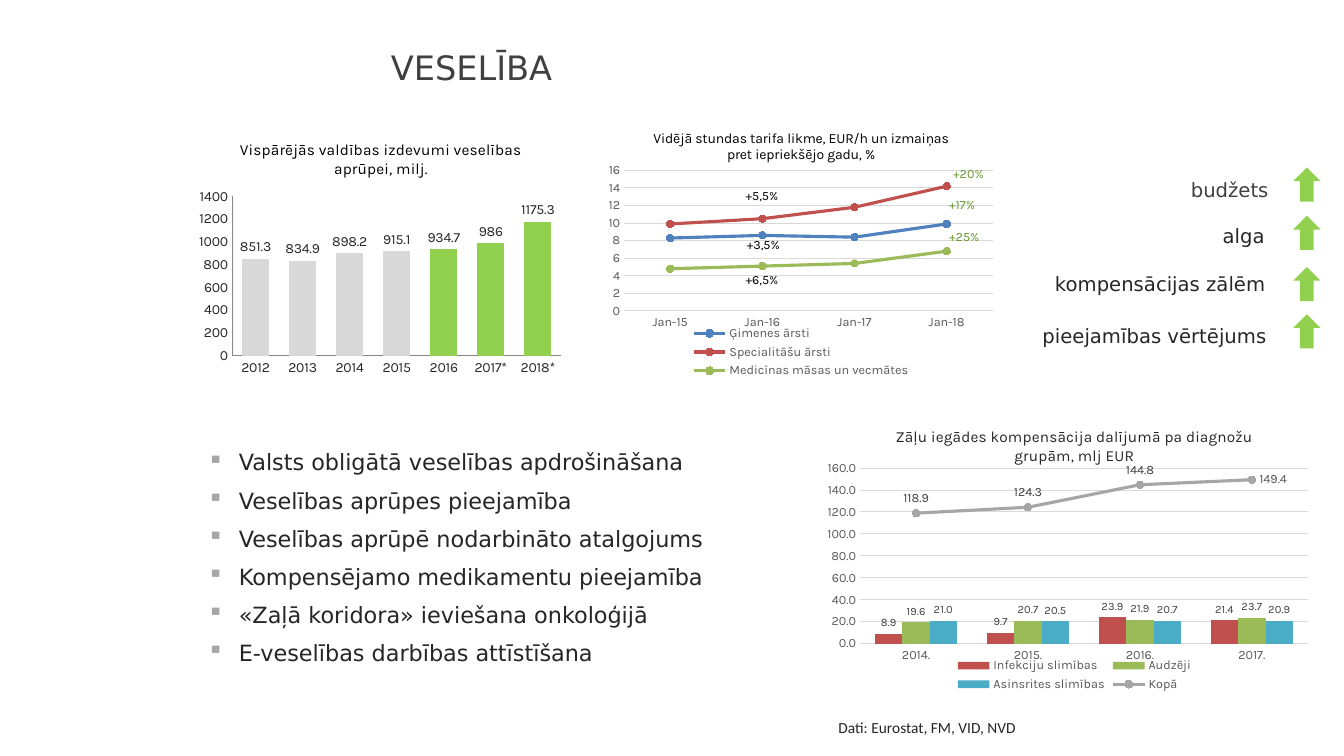
from lxml import etree
from pptx import Presentation
from pptx.chart.data import CategoryChartData
from pptx.dml.color import RGBColor
from pptx.enum.chart import (XL_CHART_TYPE, XL_LABEL_POSITION, XL_LEGEND_POSITION,
                             XL_MARKER_STYLE, XL_TICK_MARK)
from pptx.enum.shapes import MSO_SHAPE
from pptx.enum.text import PP_ALIGN
from pptx.oxml import parse_xml
from pptx.oxml.ns import nsdecls, qn
from pptx.util import Cm, Pt

COLUMNS, LINES = XL_CHART_TYPE.COLUMN_CLUSTERED, XL_CHART_TYPE.LINE_MARKERS
ABOVE, RIGHT, OUTSIDE = (XL_LABEL_POSITION.ABOVE, XL_LABEL_POSITION.RIGHT,
                         XL_LABEL_POSITION.OUTSIDE_END)
BOTTOM, CIRCLE, NO_TICK = XL_LEGEND_POSITION.BOTTOM, XL_MARKER_STYLE.CIRCLE, XL_TICK_MARK.NONE
UP_ARROW = MSO_SHAPE.UP_ARROW
ALIGN_LEFT, ALIGN_RIGHT = PP_ALIGN.LEFT, PP_ALIGN.RIGHT

BODY, CHART = "DejaVu Sans", "Karla"
INK, DARK, GREY, MID, PALE = "262626", "404040", "595959", "A6A6A6", "D9D9D9"
LIME, GREEN, BLACK = "92D050", "639729", "000000"
BLUE, RED, OLIVE, TEAL = "4F81BD", "C0504D", "9BBB59", "4BACC6"


def rgb(value):
    return RGBColor.from_string(value)


def set_font(font, size, color, name=CHART):
    font.size, font.name, font.bold = Pt(size), name, False
    font.color.rgb = rgb(color)


def add_text(slide, box, lines, size=14, color=INK, font=BODY, align=ALIGN_LEFT,
             wrap=True, after=0, bullet=None):
    tf = slide.shapes.add_textbox(*map(Cm, box)).text_frame
    tf.word_wrap = wrap
    for i, line in enumerate(lines):
        p = tf.paragraphs[0] if i == 0 else tf.add_paragraph()
        p.alignment, p.space_after = align, Pt(after)
        if bullet:
            add_bullet(p, bullet)
        r = p.add_run()
        r.text = line
        set_font(r.font, size, color, font)


def add_bullet(p, char):
    pPr = p._p.get_or_add_pPr()
    pPr.set("marL", str(Cm(0.79)))
    pPr.set("indent", str(-Cm(0.79)))
    color = etree.SubElement(pPr, qn("a:buClr"))
    etree.SubElement(color, qn("a:srgbClr"), val=MID)
    etree.SubElement(pPr, qn("a:buChar"), char=char)


def add_chart(slide, box, kind, categories, series, title, title_size, title_color,
              plot, top, step, size=9, color=GREY, cat_format=None):
    """Add a chart with its title, inner plot area and value scale set."""
    data = CategoryChartData()
    data.categories = categories
    if cat_format:
        data.categories.number_format = cat_format
    for name, values in series:
        data.add_series(name, values)
    chart = slide.shapes.add_chart(kind, *map(Cm, box), data).chart
    set_font(chart.font, size, color)
    chart.has_legend = False
    tf = chart.chart_title.text_frame
    tf.text = title
    set_font(tf.paragraphs[0].runs[0].font, title_size, title_color)
    chart.plots[0].vary_by_categories = False
    for axis in (chart.category_axis, chart.value_axis):
        axis.major_tick_mark = axis.minor_tick_mark = NO_TICK
        set_font(axis.tick_labels.font, size, color)
    chart.value_axis.minimum_scale, chart.value_axis.maximum_scale = 0, top
    chart.value_axis.major_unit = step
    set_plot_area(chart, plot)
    return chart


def set_plot_area(chart, plot):
    area = chart._chartSpace.find(".//" + qn("c:plotArea"))
    for old in area.findall(qn("c:layout")):
        area.remove(old)
    parts = "".join(f'<c:{tag} val="{val}"/>' for tag, val in zip("xywh", plot))
    area.insert(0, parse_xml(
        f'<c:layout {nsdecls("c")}><c:manualLayout><c:layoutTarget val="inner"/>'
        f'<c:xMode val="edge"/><c:yMode val="edge"/>{parts}</c:manualLayout></c:layout>'))


def add_grid_and_legend(chart):
    grid, base = chart.value_axis.major_gridlines.format.line, chart.category_axis.format.line
    for line in (grid, base):
        line.color.rgb, line.width = rgb(PALE), Pt(0.75)
    chart.value_axis.format.line.fill.background()
    chart.has_legend = True
    chart.legend.position, chart.legend.include_in_layout = BOTTOM, False
    set_font(chart.legend.font, 9, GREY)


def style_line(series, color):
    series.smooth = False
    series.format.line.color.rgb, series.format.line.width = rgb(color), Pt(2.25)
    series.marker.style, series.marker.size = CIRCLE, 5
    series.marker.format.fill.solid()
    series.marker.format.fill.fore_color.rgb = rgb(color)
    series.marker.format.line.color.rgb = rgb(color)


def fill(part, color):
    part.format.fill.solid()
    part.format.fill.fore_color.rgb = rgb(color)


def label_values(series, size, color, position, number_format):
    labels = series.data_labels
    labels.show_value, labels.position = True, position
    labels.number_format, labels.number_format_is_linked = number_format, False
    set_font(labels.font, size, color)


def move_last_series_to_line(chart):
    """Draw the last column series as a line on the same axes."""
    bars = chart._chartSpace.find(".//" + qn("c:barChart"))
    line = parse_xml(f'<c:lineChart {nsdecls("c")}><c:grouping val="stacked"/>'
                     '<c:varyColors val="0"/><c:marker val="1"/></c:lineChart>')
    ser = bars.findall(qn("c:ser"))[-1]
    for invert in ser.findall(qn("c:invertIfNegative")):
        ser.remove(invert)
    line.insert(2, ser)
    for axis in bars.findall(qn("c:axId")):
        etree.SubElement(line, qn("c:axId"), val=axis.get("val"))
    bars.addnext(line)


def spending_chart(slide, box):
    chart = add_chart(
        slide, box, COLUMNS, ["2012", "2013", "2014", "2015", "2016", "2017*", "2018*"],
        [("Series 1", [851.3, 834.9, 898.2, 915.1, 934.7, 986, 1175.3])],
        "Vispārējās valdības izdevumi veselības aprūpei, milj.", 11, BLACK,
        (0.105, 0.275, 0.874, 0.625), 1400, 200, size=10, color=INK)
    plot = chart.plots[0]
    plot.gap_width, plot.overlap = 75, 40
    chart.value_axis.has_major_gridlines = False
    for axis in (chart.category_axis, chart.value_axis):
        axis.format.line.color.rgb = rgb("868686")
    series = plot.series[0]
    fill(series, PALE)
    for i in (4, 5, 6):
        fill(series.points[i], LIME)
    label_values(series, 10, INK, OUTSIDE, "General")


def rate_chart(slide, box):
    chart = add_chart(
        slide, box, LINES, [42217, 42583, 42948, 43313],
        [("Ģimenes ārsti", [8.3, 8.6, 8.4, 9.9]),
         ("Specialitāšu ārsti", [9.9, 10.5, 11.8, 14.2]),
         ("Medicīnas māsas un vecmātes", [4.8, 5.1, 5.4, 6.8])],
        "Vidējā stundas tarifa likme, EUR/h un izmaiņas pret iepriekšējo gadu, %", 10, BLACK,
        (0.067, 0.205, 0.903, 0.528), 16, 2, cat_format="mmm-yy")
    ticks = chart.category_axis.tick_labels
    ticks.number_format, ticks.number_format_is_linked = "mmm-yy", False
    add_grid_and_legend(chart)
    for series, color in zip(chart.plots[0].series, (BLUE, RED, OLIVE)):
        style_line(series, color)
    for text, dx, dy, color in (
            ("+5,5%", 3.5, 1.7, BLACK), ("+3,5%", 3.53, 2.92, BLACK), ("+6,5%", 3.5, 3.81, BLACK),
            ("+20%", 8.73, 1.14, GREEN), ("+17%", 8.63, 1.91, GREEN), ("+25%", 8.63, 2.72, GREEN)):
        add_text(slide, (box[0] + dx, box[1] + dy, 1.65, 0.56), [text],
                 size=9, color=color, font=CHART)


def compensation_chart(slide, box):
    chart = add_chart(
        slide, box, COLUMNS, ["2014.", "2015.", "2016.", "2017."],
        [("Infekciju slimības", [8.9, 9.7, 23.9, 21.4]),
         ("Audzēji", [19.6, 20.7, 21.9, 23.7]),
         ("Asinsrites slimības", [21, 20.5, 20.7, 20.9]),
         ("Kopā", [118.9, 124.3, 144.8, 149.4])],
        "Zāļu iegādes kompensācija dalījumā pa diagnožu grupām, mlj EUR", 11, INK,
        (0.064, 0.197, 0.911, 0.62), 160, 20)
    ticks = chart.value_axis.tick_labels
    ticks.number_format, ticks.number_format_is_linked = "0.0", False
    add_grid_and_legend(chart)
    move_last_series_to_line(chart)
    bars, lines = chart.plots
    bars.gap_width, bars.overlap = 109, 0
    for series, color in zip(bars.series, (RED, OLIVE, TEAL)):
        fill(series, color)
        label_values(series, 8, DARK, OUTSIDE, "0.0")
    total = lines.series[0]
    style_line(total, MID)
    label_values(total, 9, DARK, ABOVE, "0.0")
    total.points[3].data_label.position = RIGHT


def trend_list(slide, box):
    """Right-aligned topics, each with an arrow pointing up."""
    x, y, w, h = box
    for text, dy, arrow_dy, inset, color in (
            ("budžets", 0.15, 0, 1.06, DARK), ("alga", 1.29, 1.22, 1.16, INK),
            ("kompensācijas zālēm", 2.51, 2.51, 1.14, INK),
            ("pieejamības vērtējums", 3.81, 3.7, 1.11, INK)):
        add_text(slide, (x, y + dy, w - inset, 0.86), [text], color=color, align=ALIGN_RIGHT)
        sp = slide.shapes.add_shape(UP_ARROW, Cm(x + w - 0.69), Cm(y + arrow_dy),
                                    Cm(0.69), Cm(0.86))
        sp.shadow.inherit = False
        sp.fill.solid()
        sp.fill.fore_color.rgb = rgb(LIME)
        sp.line.fill.background()


def main():
    prs = Presentation()
    prs.slide_width, prs.slide_height = Cm(33.87), Cm(19.05)
    slide = prs.slides.add_slide(prs.slide_layouts[6])
    add_text(slide, (9.6, 1.07, 22.58, 2.87), ["VESELĪBA"], size=24, color=DARK)
    add_text(slide, (4.98, 11.18, 15.24, 7.49), [
        "Valsts obligātā veselības apdrošināšana", "Veselības aprūpes pieejamība",
        "Veselības aprūpē nodarbināto atalgojums", "Kompensējamo medikamentu pieejamība",
        "«Zaļā koridora» ieviešana onkoloģijā", "E-veselības darbības attīstīšana",
    ], size=16, after=8, bullet="▪")
    spending_chart(slide, (4.85, 3.18, 9.5, 6.43))
    rate_chart(slide, (15.04, 2.92, 10.29, 6.71))
    compensation_chart(slide, (20.85, 10.39, 12.42, 7.14))
    trend_list(slide, (25.93, 4.22, 7.35, 4.56))
    add_text(slide, (20.88, 17.96, 5.31, 0.74), ["Dati: Eurostat, FM, VID, NVD"],
             size=11, font="Calibri", wrap=False)
    prs.save("out.pptx")


if __name__ == "__main__":
    main()
